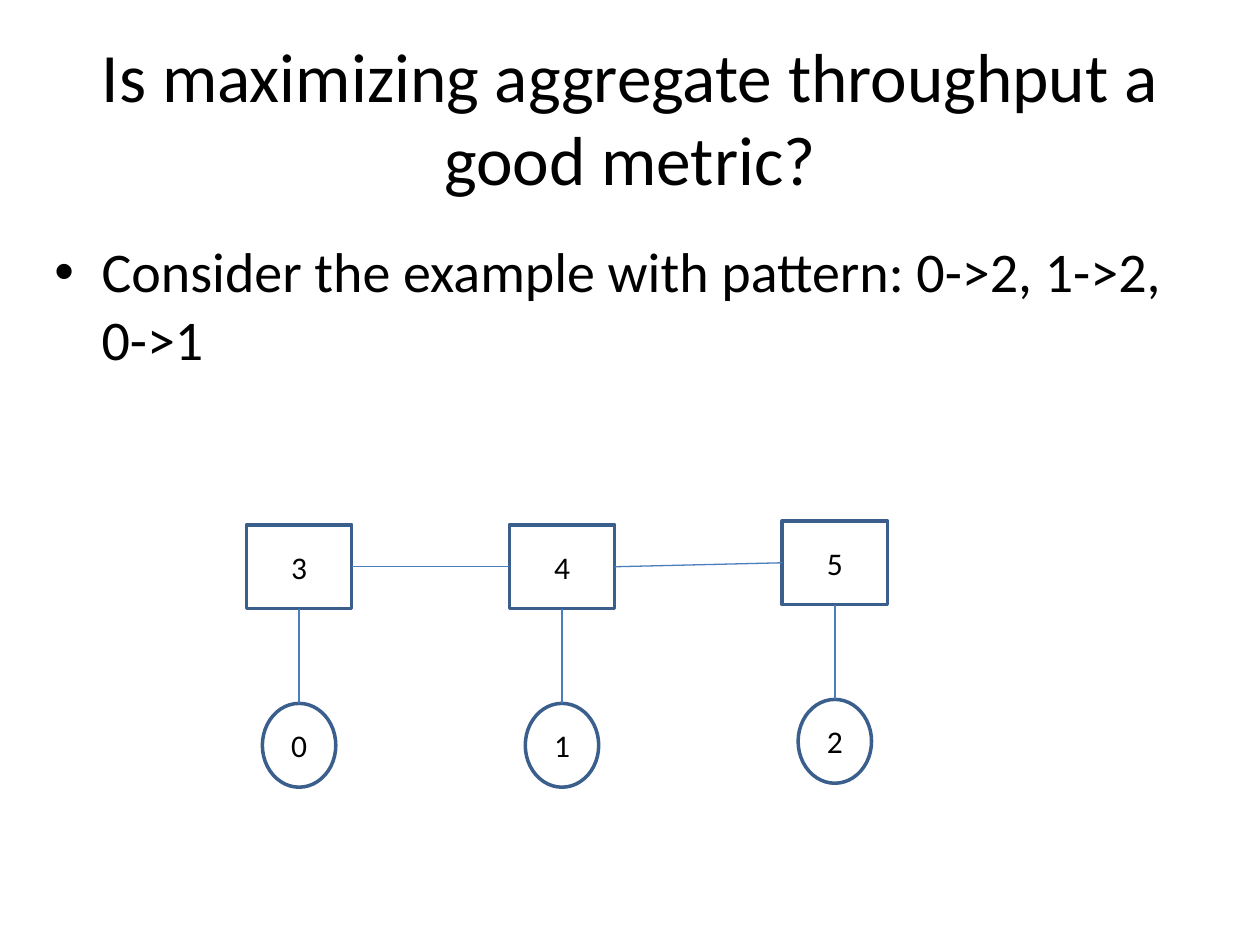
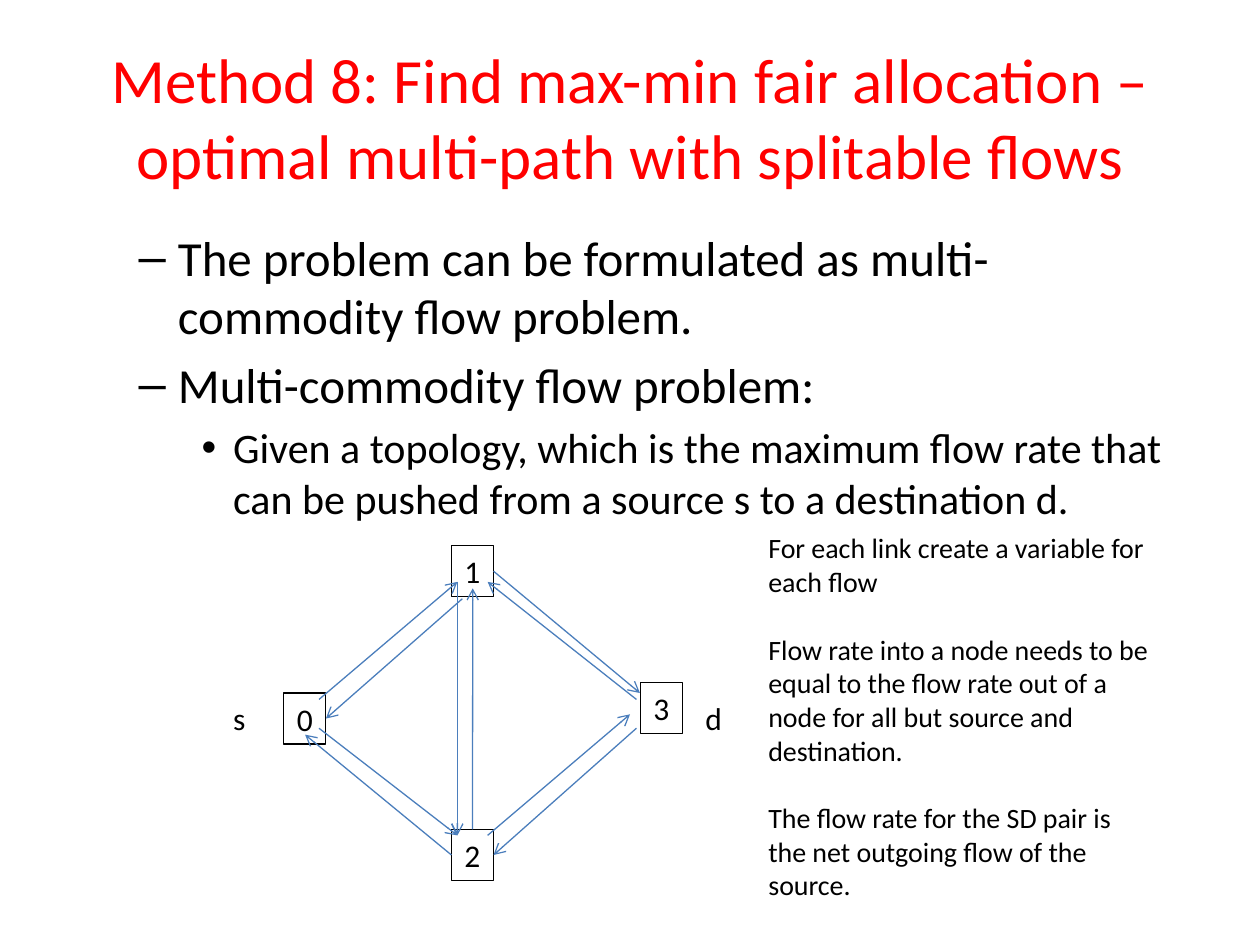
"""Build two slides on throughput metrics and max-min fair flows."""
import dataclasses

import pptx
import pptx.dml.color
import pptx.enum.shapes
import pptx.enum.text
import pptx.oxml
import pptx.oxml.ns
import pptx.util

Cm = pptx.util.Cm
Pt = pptx.util.Pt
RGB = pptx.dml.color.RGBColor
SHAPE = pptx.enum.shapes.MSO_SHAPE
ALIGN = pptx.enum.text.PP_ALIGN
ANCHOR = pptx.enum.text.MSO_ANCHOR
FIT = pptx.enum.text.MSO_AUTO_SIZE


@dataclasses.dataclass(frozen=True)
class Theme:
    """Colours and type sizes of the deck."""
    font: str = "Calibri"
    ink: RGB = RGB(0, 0, 0)
    alert: RGB = RGB(0xFF, 0, 0)
    frame: RGB = RGB(0x3A, 0x5F, 0x8C)
    link: RGB = RGB(0x4B, 0x7E, 0xBC)
    title: float = 39.6
    method: float = 36
    levels: tuple = (32, 28, 24)
    label: float = 18
    note: float = 16
    thin: float = 0.75
    thick: float = 2


THEME = Theme()


def place(shape, left, top, width, height):
    """Move and size a shape, in centimetres."""
    shape.left, shape.top = Cm(left), Cm(top)
    shape.width, shape.height = Cm(width), Cm(height)


def style(par, size, color=THEME.ink):
    """Format every run of a paragraph."""
    for run in par.runs:
        run.font.name = THEME.font
        run.font.size = Pt(size)
        run.font.color.rgb = color


def add_page(deck, title, size, color=THEME.ink):
    """Add a slide with a formatted title."""
    slide = deck.slides.add_slide(deck.slide_layouts[1])
    head = slide.shapes.title
    place(head, 1.27, 0.76, 22.86, 3.18)
    frame = head.text_frame
    frame.text = title
    frame.auto_size = FIT.NONE
    frame.vertical_anchor = ANCHOR.MIDDLE
    frame.paragraphs[0].alignment = ALIGN.CENTER
    style(frame.paragraphs[0], size, color)
    return slide


def fill_list(slide, spot, items):
    """Fill the body with (level, text) bullets."""
    body = slide.placeholders[1]
    place(body, *spot)
    frame = body.text_frame
    frame.text = "\n".join(text for _, text in items)
    frame.auto_size = FIT.NONE
    for par, (level, _) in zip(frame.paragraphs, items):
        par.level = level
        style(par, THEME.levels[level])
    frame.paragraphs[0].space_before = Pt(0)


def add_node(slide, kind, label, spot, color, weight):
    """Add an outlined node with a centred label."""
    node = slide.shapes.add_shape(kind, *map(Cm, spot))
    node.shadow.inherit = False
    node.fill.background()
    node.line.color.rgb = color
    node.line.width = Pt(weight)
    frame = node.text_frame
    frame.margin_left = frame.margin_right = 0
    frame.margin_top = frame.margin_bottom = 0
    frame.word_wrap = False
    frame.vertical_anchor = ANCHOR.MIDDLE
    frame.text = label
    frame.paragraphs[0].alignment = ALIGN.CENTER
    style(frame.paragraphs[0], THEME.label)
    return node


def add_link(slide, start, stop, arrow=False):
    """Link two ends, each an (x, y) point or a (node, side) joint."""
    joints = [hasattr(end[0], "shape_id") for end in (start, stop)]
    points = [(0, 0) if joint else end
              for joint, end in zip(joints, (start, stop))]
    line = slide.shapes.add_connector(
        pptx.enum.shapes.MSO_CONNECTOR.STRAIGHT,
        *(Cm(value) for point in points for value in point))
    if joints[0]:
        line.begin_connect(*start)
    if joints[1]:
        line.end_connect(*stop)
    line.line.color.rgb = THEME.link
    line.line.width = Pt(THEME.thin)
    props = line.element.spPr
    if arrow:
        tip = pptx.oxml.parse_xml(
            f'<a:tailEnd {pptx.oxml.ns.nsdecls("a")} type="arrow"/>')
        props.find(pptx.oxml.ns.qn("a:ln")).append(tip)
    props.append(pptx.oxml.parse_xml(
        f'<a:effectLst {pptx.oxml.ns.nsdecls("a")}/>'))


def add_text(slide, spot, lines, size, gap=0):
    """Add a wrapping text box with a gap between paragraphs."""
    box = slide.shapes.add_textbox(*map(Cm, spot))
    frame = box.text_frame
    frame.word_wrap = True
    frame.text = "\n".join(lines)
    for index, par in enumerate(frame.paragraphs):
        style(par, size)
        if index:
            par.space_before = Pt(gap)


def add_chain(slide):
    """Draw three joined switches, each with a host below."""
    chain = (("3", "0", 4.97, 10.58),
             ("4", "1", 10.27, 10.58),
             ("5", "2", 15.77, 10.5))
    last = None
    for switch, host, left, top in chain:
        box = add_node(slide, SHAPE.RECTANGLE, switch,
                       (left, top, 2.12, 1.69), THEME.frame, THEME.thick)
        disc = add_node(slide, SHAPE.OVAL, host,
                        (left + 0.32, top + 3.6, 1.48, 1.69),
                        THEME.frame, THEME.thick)
        add_link(slide, (disc, 0), (box, 2))
        if last:
            add_link(slide, (last, 3), (box, 1))
        last = box


def add_graph(slide):
    """Draw the four-node graph with a link each way."""
    spots = ((5.72, 13.97), (9.1, 11.0), (9.1, 16.72), (12.91, 13.76))
    nodes = [add_node(slide, SHAPE.RECTANGLE, str(index),
                      (*spot, 0.85, 1.03), THEME.ink, THEME.thin)
             for index, spot in enumerate(spots)]
    source, upper, lower, _ = nodes
    links = (
        ((6.43, 14.1), (9.22, 11.73)),
        ((9.32, 12.07), (source, 3)),
        ((upper, 3), (12.9, 13.97)),
        ((12.83, 14.1), (9.83, 11.73)),
        ((6.43, 14.68), (9.22, 16.84)),
        ((lower, 1), (6.15, 14.81)),
        ((9.22, 11.73), (9.22, 16.84)),
        ((lower, 0), (9.53, 11.86)),
        ((9.83, 16.84), (12.7, 14.4)),
        ((12.83, 14.68), (lower, 3)),
    )
    for start, stop in links:
        add_link(slide, start, stop, arrow=True)
    for label, left in (("s", 4.45), ("d", 13.97)):
        add_text(slide, (left, 13.97, 0.9, 1.03), [label], THEME.label)


def main():
    """Build and save the deck."""
    deck = pptx.Presentation()
    deck.slide_width, deck.slide_height = Cm(25.4), Cm(19.05)

    page = add_page(deck, "Is maximizing aggregate throughput a good metric?",
                    THEME.title)
    fill_list(page, (0.84, 4.65, 23.5, 12.7), (
        (0, "Consider the example with pattern: 0->2, 1->2, 0->1"),))
    add_chain(page)

    page = add_page(deck, "Method 8: Find max-min fair allocation – "
                    "optimal multi-path with splitable flows",
                    THEME.method, THEME.alert)
    fill_list(page, (1.27, 4.45, 22.86, 12.57), (
        (1, "The problem can be formulated as multi-commodity flow problem."),
        (1, "Multi-commodity flow problem:"),
        (2, "Given a topology, which is the maximum flow rate that can be "
            "pushed from a source s to a destination d.")))
    add_graph(page)
    add_text(page, (15.24, 10.58, 8.26, 7.77), (
        "For each link create a variable for each flow",
        "Flow rate into a node needs to be equal to the flow rate out of a "
        "node for all but source and destination.",
        "The flow rate for the SD pair is the net outgoing flow of the "
        "source."), THEME.note, gap=19.5)
    deck.save("out.pptx")


if __name__ == "__main__":
    main()
